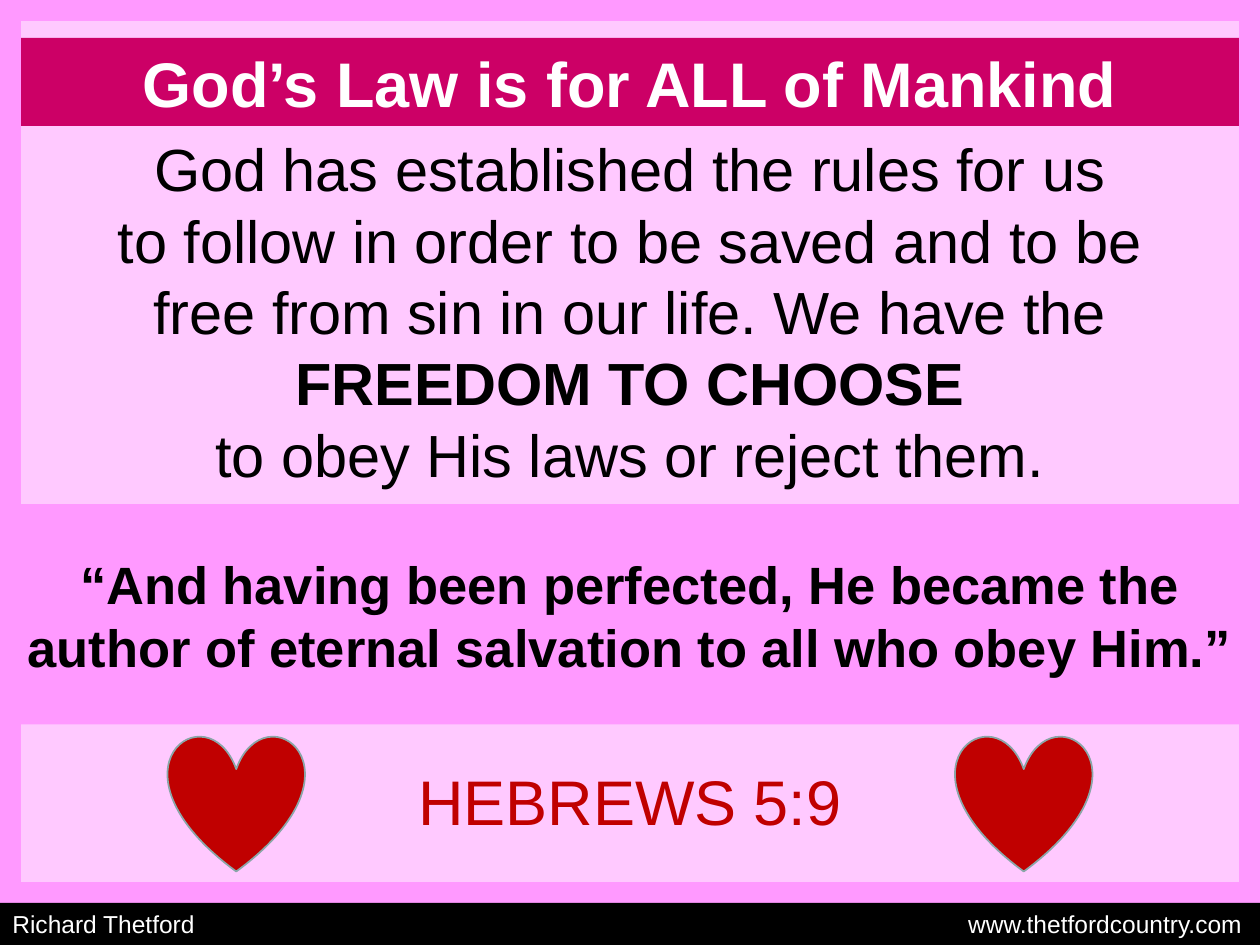
from lxml.etree import SubElement
from pptx import Presentation
from pptx.dml.color import RGBColor
from pptx.enum.shapes import MSO_SHAPE
from pptx.enum.text import MSO_ANCHOR, MSO_AUTO_SIZE, PP_ALIGN
from pptx.oxml.ns import qn
from pptx.util import Inches, Pt

PALE_PINK = RGBColor(0xFF, 0xC9, 0xFF)
PINK = RGBColor(0xFF, 0x99, 0xFF)
MAGENTA = RGBColor(0xCC, 0x00, 0x66)
RED = RGBColor(0xC0, 0x00, 0x00)
GREY = RGBColor(0x8A, 0xA6, 0xA8)
BLACK = RGBColor(0, 0, 0)
WHITE = RGBColor(0xFF, 0xFF, 0xFF)

# The grid has 60 columns and 45 rows of square cells
CELL = Inches(10) / 60


def write(paragraph, text, size=36, color=BLACK, bold=False):
    """Add text to a paragraph; each newline becomes a line break."""
    for index, line in enumerate(text.split("\n")):
        if index:
            paragraph.add_line_break()
        if line:
            run = paragraph.add_run()
            run.text = line
            run.font.name = "Arial"
            run.font.size = Pt(size)
            run.font.bold = bold
            run.font.color.rgb = color


class VerseSlide:
    def __init__(self, presentation):
        self.slide = presentation.slides.add_slide(presentation.slide_layouts[1])
        self.slide.background.fill.solid()
        self.slide.background.fill.fore_color.rgb = PALE_PINK

    def box(self, *cells):
        return [round(value * CELL) for value in cells]

    def place(self, shape, *cells):
        shape.left, shape.top, shape.width, shape.height = self.box(*cells)

    def shape(self, *cells, fill=PINK, line=None, kind=MSO_SHAPE.RECTANGLE):
        shape = self.slide.shapes.add_shape(kind, *self.box(*cells))
        shape.shadow.inherit = False
        shape.fill.solid()
        shape.fill.fore_color.rgb = fill
        if line is None:
            shape.line.fill.background()
        else:
            shape.line.color.rgb = line
            shape.line.width = Pt(1)
        return shape

    def text_box(self, *cells):
        return self.slide.shapes.add_textbox(*self.box(*cells))

    def paragraph(self, shape, align=PP_ALIGN.CENTER, anchor=MSO_ANCHOR.TOP):
        frame = shape.text_frame
        frame.word_wrap = True
        frame.auto_size = MSO_AUTO_SIZE.NONE
        frame.vertical_anchor = anchor
        paragraph = frame.paragraphs[0]
        paragraph.alignment = align
        paragraph.space_before = Pt(0)
        return paragraph


def main():
    presentation = Presentation()
    presentation.slide_width = Inches(10)
    presentation.slide_height = Inches(7.5)
    verse = VerseSlide(presentation)

    # Title band
    title = verse.slide.shapes.title
    verse.place(title, 0.5, 1.8, 59, 4.2)
    title.fill.solid()
    title.fill.fore_color.rgb = MAGENTA
    write(verse.paragraph(title), "God’s Law is for ALL of Mankind",
          color=WHITE, bold=True)

    # Message without a bullet
    body = verse.slide.placeholders[1]
    verse.place(body, 1, 6, 58, 17.75)
    message = verse.paragraph(body)
    properties = message._p.get_or_add_pPr()
    properties.set("marL", "0")
    properties.set("indent", "0")
    SubElement(properties, qn("a:buNone"))
    write(message, "God has established the rules for us\n"
                   "to follow in order to be saved and to be\n"
                   "free from sin in our life. We have the\n", size=34)
    write(message, "FREEDOM TO CHOOSE\n", size=34, bold=True)
    write(message, "to obey His laws or reject them.", size=34)

    # Quotation on its band
    verse.shape(0, 24, 60, 10.5)
    quotation = verse.paragraph(verse.text_box(0, 26, 60, 6.65))
    write(quotation, "“And having been perfected, He became the "
                     "author of eternal salvation to all who obey Him.”",
          size=30, bold=True)

    # Frame: left, right, top, bottom
    for cells in ((0, 0, 1, 45), (59, 0, 1, 45), (0, 0, 60, 1), (0, 42, 60, 1)):
        verse.shape(*cells)

    # Footer with a right tab for the address
    footer = verse.paragraph(verse.shape(0, 43, 60, 2, fill=BLACK),
                             align=PP_ALIGN.LEFT, anchor=MSO_ANCHOR.MIDDLE)
    tabs = SubElement(footer._p.get_or_add_pPr(), qn("a:tabLst"))
    SubElement(tabs, qn("a:tab"), pos=str(Inches(9.76)), algn="r")
    write(footer, "Richard Thetford\twww.thetfordcountry.com",
          size=14, color=WHITE)

    # Verse reference between two hearts
    reference = verse.paragraph(verse.text_box(1, 36, 58, 4.25),
                                anchor=MSO_ANCHOR.MIDDLE)
    write(reference, "HEBREWS 5:9", color=RED)
    for column in (8, 45.5):
        verse.shape(column, 35, 6.5, 6.5, fill=RED, line=GREY,
                    kind=MSO_SHAPE.HEART)

    presentation.save("out.pptx")


if __name__ == "__main__":
    main()
